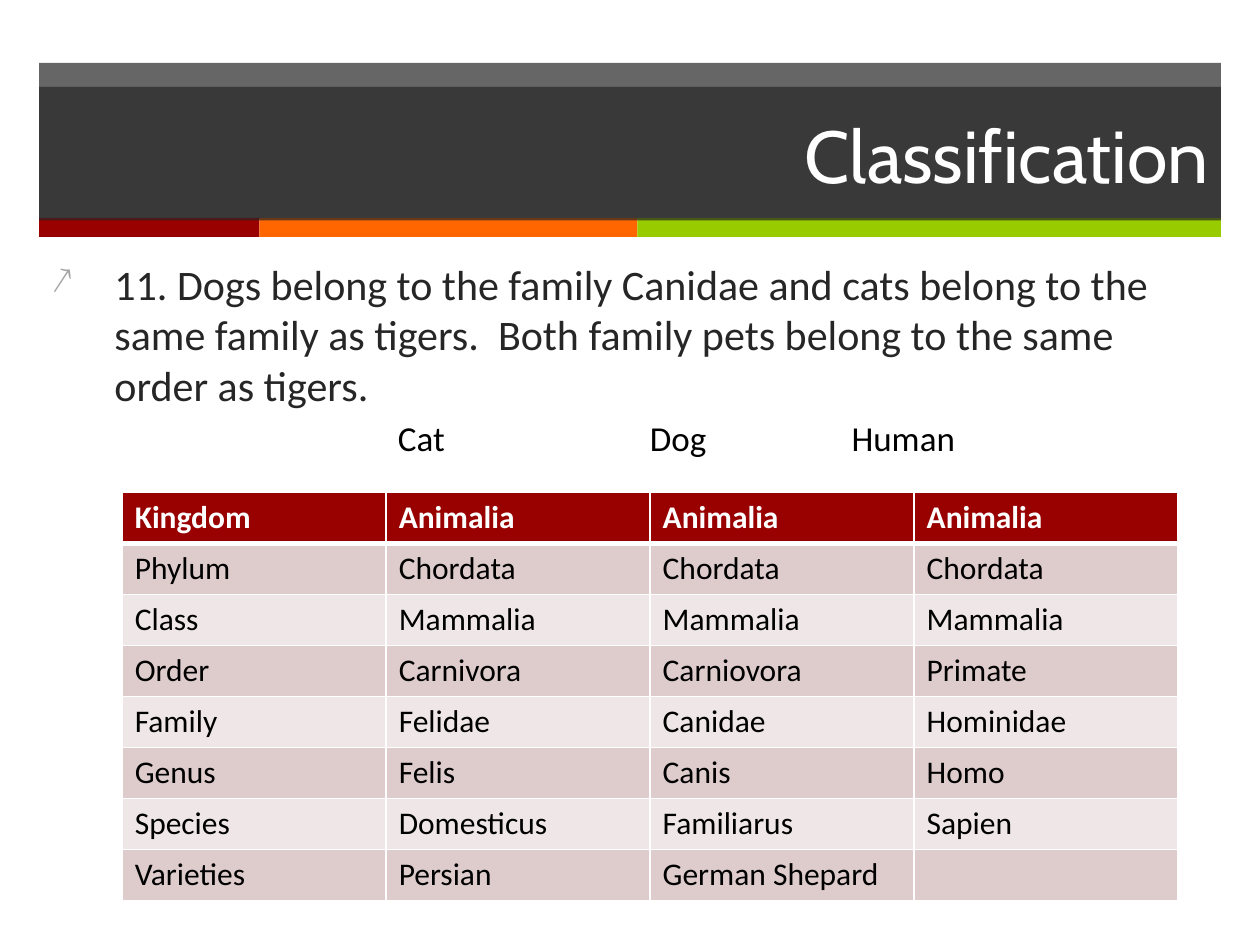
from dataclasses import dataclass

from lxml.etree import SubElement
from pptx import Presentation
from pptx.dml.color import RGBColor
from pptx.enum.shapes import MSO_SHAPE
from pptx.enum.text import MSO_ANCHOR, PP_ALIGN
from pptx.oxml.ns import qn
from pptx.util import Inches, Pt

# Content
TITLE = "Classification"
QUESTION = ("11. Dogs belong to the family Canidae and cats belong to the same "
            "family as tigers.  Both family pets belong to the same order as tigers.")
ANIMALS = [("Cat", 2.75), ("Dog", 4.75), ("Human", 6.35)]  # name, tab stop
RANKS = [
    ("Kingdom", "Animalia", "Animalia", "Animalia"),
    ("Phylum", "Chordata", "Chordata", "Chordata"),
    ("Class", "Mammalia", "Mammalia", "Mammalia"),
    ("Order", "Carnivora", "Carniovora", "Primate"),
    ("Family", "Felidae", "Canidae", "Hominidae"),
    ("Genus", "Felis", "Canis", "Homo"),
    ("Species", "Domesticus", "Familiarus", "Sapien"),
    ("Varieties", "Persian", "German Shepard", ""),
]


@dataclass(frozen=True)
class Theme:
    dark: str = "262626"
    white: str = "FFFFFF"
    black: str = "000000"
    bullet: str = "A6A6A6"
    red: str = "990000"
    orange: str = "FF6600"
    green: str = "99CC00"
    bands: tuple = ("EFE7E7", "DECCCC")  # even rows, odd rows
    title_font: str = "Cabin"
    body_font: str = "Calibri"
    title_size: int = 42
    question_size: int = 24
    animal_size: int = 20
    table_size: int = 18


THEME = Theme()
LEFT, WIDTH = 0.31, 9.38
STRIPES = [(THEME.red, 1.75), (THEME.orange, 3), (THEME.green, 4.63)]


def style(paragraph, font, size, color, bold=False):
    paragraph.font.name = font
    paragraph.font.size = Pt(size)
    paragraph.font.bold = bold
    paragraph.font.color.rgb = RGBColor.from_string(color)


def add_bar(slide, left, top, width, height, color, opacity=100):
    bar = slide.shapes.add_shape(MSO_SHAPE.RECTANGLE, Inches(left), Inches(top),
                                 Inches(width), Inches(height))
    bar.shadow.inherit = False
    bar.fill.solid()
    bar.fill.fore_color.rgb = RGBColor.from_string(color)
    bar.line.fill.background()
    if opacity < 100:
        rgb = bar.fill._xPr.find(".//" + qn("a:srgbClr"))
        SubElement(rgb, qn("a:alpha"), val=str(opacity * 1000))
    return bar


def add_header(slide):
    add_bar(slide, LEFT, 0.5, WIDTH, 1.24, THEME.dark, opacity=70)
    left = LEFT
    for color, width in STRIPES:
        add_bar(slide, left, 1.73, width, 0.15, color)
        left += width
    banner = add_bar(slide, LEFT, 0.69, WIDTH, 1.06, THEME.dark, opacity=70)
    banner.text_frame.vertical_anchor = MSO_ANCHOR.MIDDLE
    title = banner.text_frame.paragraphs[0]
    title.text = TITLE
    title.alignment = PP_ALIGN.RIGHT
    style(title, THEME.title_font, THEME.title_size, THEME.white)


def add_body(slide):
    body = slide.shapes.add_textbox(Inches(LEFT), Inches(2), Inches(9.05), Inches(5.15))
    body.text_frame.word_wrap = True

    # Question with a hanging arrow bullet
    question = body.text_frame.paragraphs[0]
    question.text = QUESTION
    style(question, THEME.body_font, THEME.question_size, THEME.dark)
    props = question._p.get_or_add_pPr()
    props.set("marL", str(Inches(0.5)))
    props.set("indent", str(Inches(-0.5)))
    bullet_parts = [SubElement(props, qn("a:buClr")),
                    SubElement(props, qn("a:buSzPct"), val="90000"),
                    SubElement(props, qn("a:buChar"), char="↗")]
    SubElement(bullet_parts[0], qn("a:srgbClr"), val=THEME.bullet)
    props.append(props.find(qn("a:defRPr")))

    # Column headings on tab stops
    headings = body.text_frame.add_paragraph()
    headings.add_run().text = "".join("\t" + name for name, _ in ANIMALS)
    headings.space_before = Pt(4)
    style(headings, THEME.body_font, THEME.animal_size, THEME.black)
    props = headings._p.get_or_add_pPr()
    stops = SubElement(props, qn("a:tabLst"))
    for _, stop in ANIMALS:
        SubElement(stops, qn("a:tab"), pos=str(Inches(stop)), algn="l")
    props.append(props.find(qn("a:defRPr")))


def set_borders(cell, **widths):
    props = cell._tc.get_or_add_tcPr()
    for side in "LRTB":
        line = SubElement(props, qn("a:ln" + side), w=str(Pt(widths.get(side, 1))))
        fill = SubElement(line, qn("a:solidFill"))
        SubElement(fill, qn("a:srgbClr"), val=THEME.white)


def add_ranks(slide):
    width, height = Inches(8.38), Inches(3.24)
    table = slide.shapes.add_table(len(RANKS), len(RANKS[0]), Inches(0.97),
                                   Inches(3.91), width, height).table
    table.horz_banding = False
    for r, rank in enumerate(RANKS):
        header = r == 0
        fill = THEME.red if header else THEME.bands[r % 2]
        color = THEME.white if header else THEME.black
        for c, value in enumerate(rank):
            cell = table.cell(r, c)
            set_borders(cell, B=3 if header else 1, T=3 if r == 1 else 1)
            cell.fill.solid()
            cell.fill.fore_color.rgb = RGBColor.from_string(fill)
            cell.text = value
            style(cell.text_frame.paragraphs[0], THEME.body_font,
                  THEME.table_size, color, bold=header)


def main():
    deck = Presentation()
    deck.slide_width, deck.slide_height = Inches(10), Inches(7.5)
    slide = deck.slides.add_slide(deck.slide_layouts[6])
    add_header(slide)
    add_body(slide)
    add_ranks(slide)
    deck.save("out.pptx")


if __name__ == "__main__":
    main()
